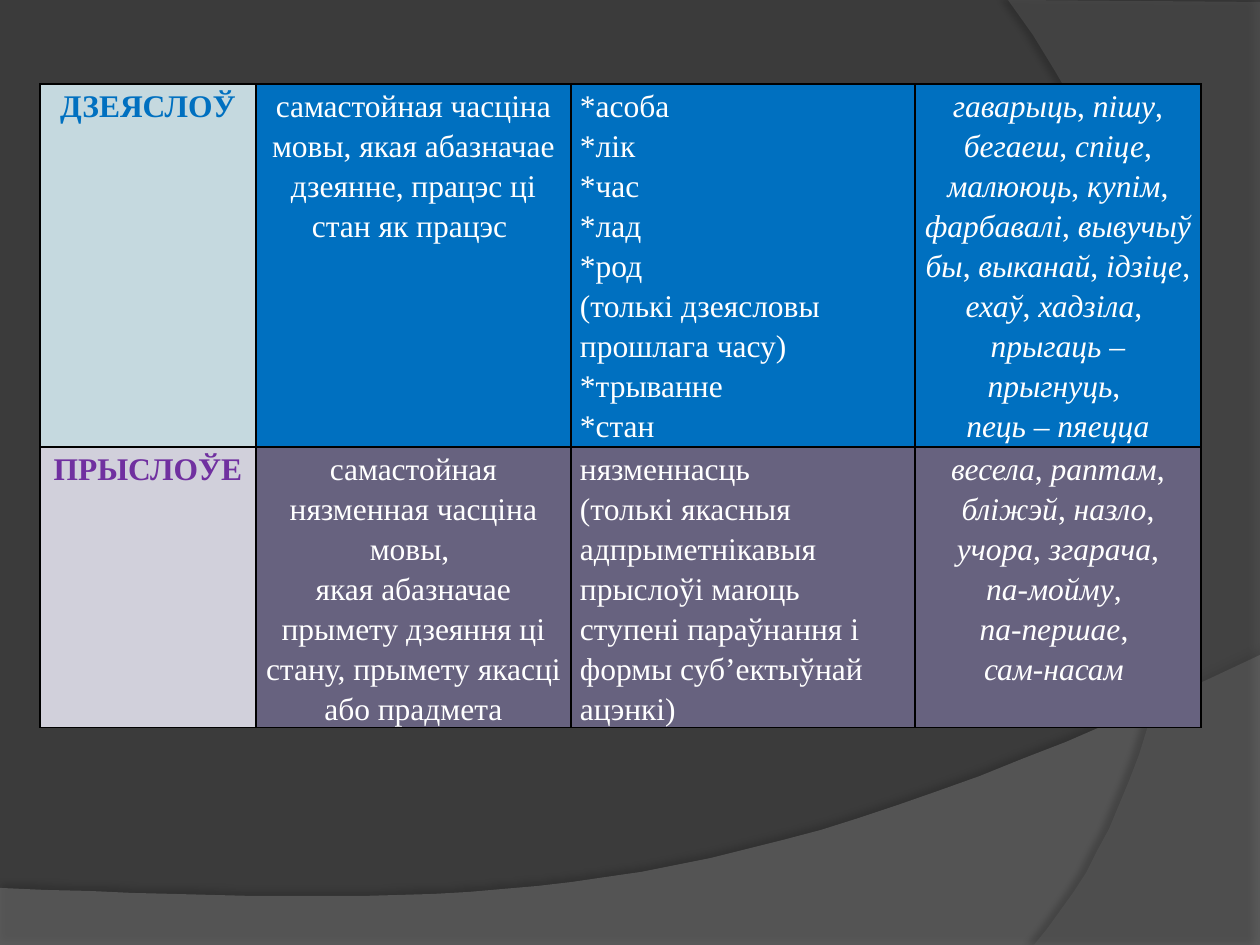
import dataclasses
import typing

import lxml.etree
import pptx
import pptx.dml.color
import pptx.enum.text
import pptx.oxml.ns
import pptx.util

SCALE = 914400 / 126
FONT = "Times New Roman"
STEPS = 32
HEX = {
    "back": "3B3B3B",
    "wave": "7F7F7F",
    "arc": "5E5E5E",
    "black": "000000",
    "white": "FFFFFF",
    "blue": "0070C0",
    "pale": "C5D9DF",
    "violet": "7030A0",
    "mist": "D1D0DB",
    "plum": "67627F",
}
Point = tuple[float, float]


@dataclasses.dataclass
class Swoosh:
    start: Point
    before: list[Point]
    curve: list[Point]
    fill: str
    alpha: int
    shade: int
    dist: float
    angle: int


@dataclasses.dataclass
class Word:
    name: str
    sense: str
    traits: str
    samples: str
    ink: str
    light: str
    dark: str


SWOOSHES = [
    Swoosh((0, 888), [(0, 945), (1260, 945), (1260, 655)],
           [(704, 919), (493, 906), (0, 888)], "wave", 45, 35, 3.5, 270),
    Swoosh((1260, 2), [(1260, 945), (1034, 945)],
           [(1178, 780), (1283, 378), (1008, 0)], "arc", 40, 45, 4, 180),
]
WORDS = [
    Word("ДЗЕЯСЛОЎ",
         "самастойная часціна мовы, якая абазначае дзеянне, працэс ці стан як працэс ",
         "*асоба\n*лік\n*час\n*лад\n*род\n(толькі дзеясловы прошлага часу)\n*трыванне\n*стан",
         "гаварыць, пішу, бегаеш, спіце, малююць, купім, фарбавалі, вывучыў бы, "
         "выканай, ідзіце, ехаў, хадзіла, \nпрыгаць – прыгнуць, \nпець – пяецца",
         "blue", "pale", "blue"),
    Word("ПРЫСЛОЎЕ",
         "самастойная нязменная часціна мовы, \n"
         "якая абазначае прымету дзеяння ці стану, прымету якасці або прадмета",
         "нязменнасць\n(толькі якасныя адпрыметнікавыя прыслоўі маюць ступені "
         "параўнання і формы суб’ектыўнай ацэнкі)",
         "весела, раптам,\nбліжэй, назло, учора, згарача,\nпа-мойму, \nпа-першае, \nсам-насам ",
         "violet", "mist", "plum"),
]
COLS = [216, 315, 344, 286]
ROWS = [363, 241]


def px(num: float) -> int:
    return round(num * SCALE)


def tint(name: str) -> pptx.dml.color.RGBColor:
    return pptx.dml.color.RGBColor.from_string(HEX[name])


def node(parent: typing.Any, tag: str, **attrs: typing.Any) -> typing.Any:
    return lxml.etree.SubElement(
        parent, pptx.oxml.ns.qn(tag), {key: str(val) for key, val in attrs.items()})


def paint(fill: typing.Any, name: str) -> None:
    fill.solid()
    fill.fore_color.rgb = tint(name)


def bend(start: Point, curve: list[Point]) -> list[Point]:
    def spot(t: float) -> Point:
        parts = [(1 - t) ** 3, 3 * t * (1 - t) ** 2, 3 * t * t * (1 - t), t ** 3]
        x, y = (sum(part * pos[axis] for part, pos in zip(parts, [start, *curve]))
                for axis in (0, 1))
        return x, y
    return [spot(step / STEPS) for step in range(1, STEPS + 1)]


def sweep(slide: typing.Any, item: Swoosh) -> None:
    pen = slide.shapes.build_freeform(*item.start, scale=SCALE)
    pen.add_line_segments(item.before + bend(item.before[-1], item.curve))
    shape = pen.convert_to_shape()
    paint(shape.fill, item.fill)
    shape.line.fill.background()
    shape.shadow.inherit = False
    props = shape.element.spPr
    color = props.find(pptx.oxml.ns.qn("a:solidFill"))[0]
    node(color, "a:alpha", val=item.alpha * 1000)
    glow = node(props.find(pptx.oxml.ns.qn("a:effectLst")), "a:outerShdw",
                blurRad=pptx.util.Pt(4), dist=pptx.util.Pt(item.dist),
                dir=item.angle * 60000, algn="ctr", rotWithShape=0)
    shade = node(glow, "a:srgbClr", val=HEX["black"])
    node(shade, "a:alpha", val=item.shade * 1000)


def write(frame: typing.Any, text: str, *, ink: str = "white", bold: bool = False,
          slant: bool = False, center: bool = True) -> None:
    align = pptx.enum.text.PP_ALIGN
    for row, line in enumerate(text.split("\n")):
        para = frame.add_paragraph() if row else frame.paragraphs[0]
        para.alignment = align.CENTER if center else align.LEFT
        para.line_spacing = 1.15
        parts = line.replace(",", "\n,\n").split("\n") if slant else [line]
        for part in filter(None, parts):
            run = para.add_run()
            run.text = part
            run.font.name = FONT
            run.font.size = pptx.util.Pt(18)
            run.font.bold = bold
            run.font.italic = slant and part != ","
            run.font.color.rgb = tint(ink)


def dress(cell: typing.Any, name: str) -> None:
    cell.margin_left = cell.margin_right = px(9)
    cell.margin_top = cell.margin_bottom = 0
    props = cell._tc.get_or_add_tcPr()
    for side in "LRTB":
        edge = node(props, f"a:ln{side}", w=pptx.util.Pt(1))
        node(node(edge, "a:solidFill"), "a:srgbClr", val=HEX["black"])
    paint(cell.fill, name)


def chart(slide: typing.Any, words: list[Word]) -> None:
    grid = slide.shapes.add_table(
        len(words), len(COLS), px(40), px(84), px(sum(COLS)), px(sum(ROWS))).table
    grid.first_row = grid.horz_banding = False
    for col, wide in zip(grid.columns, COLS):
        col.width = px(wide)
    for row, tall, word in zip(grid.rows, ROWS, words):
        row.height = px(tall)
        cells = list(row.cells)
        for cell, fill in zip(cells, [word.light] + [word.dark] * 3):
            dress(cell, fill)
        name, sense, traits, samples = (cell.text_frame for cell in cells)
        write(name, word.name, ink=word.ink, bold=True)
        write(sense, word.sense)
        write(traits, word.traits, center=False)
        write(samples, word.samples, slant=True)


def main() -> None:
    deck = pptx.Presentation()
    deck.slide_width, deck.slide_height = px(1260), px(945)
    slide = deck.slides.add_slide(deck.slide_layouts[6])
    paint(slide.background.fill, "back")
    for item in SWOOSHES:
        sweep(slide, item)
    chart(slide, WORDS)
    deck.save("out.pptx")


if __name__ == "__main__":
    main()
